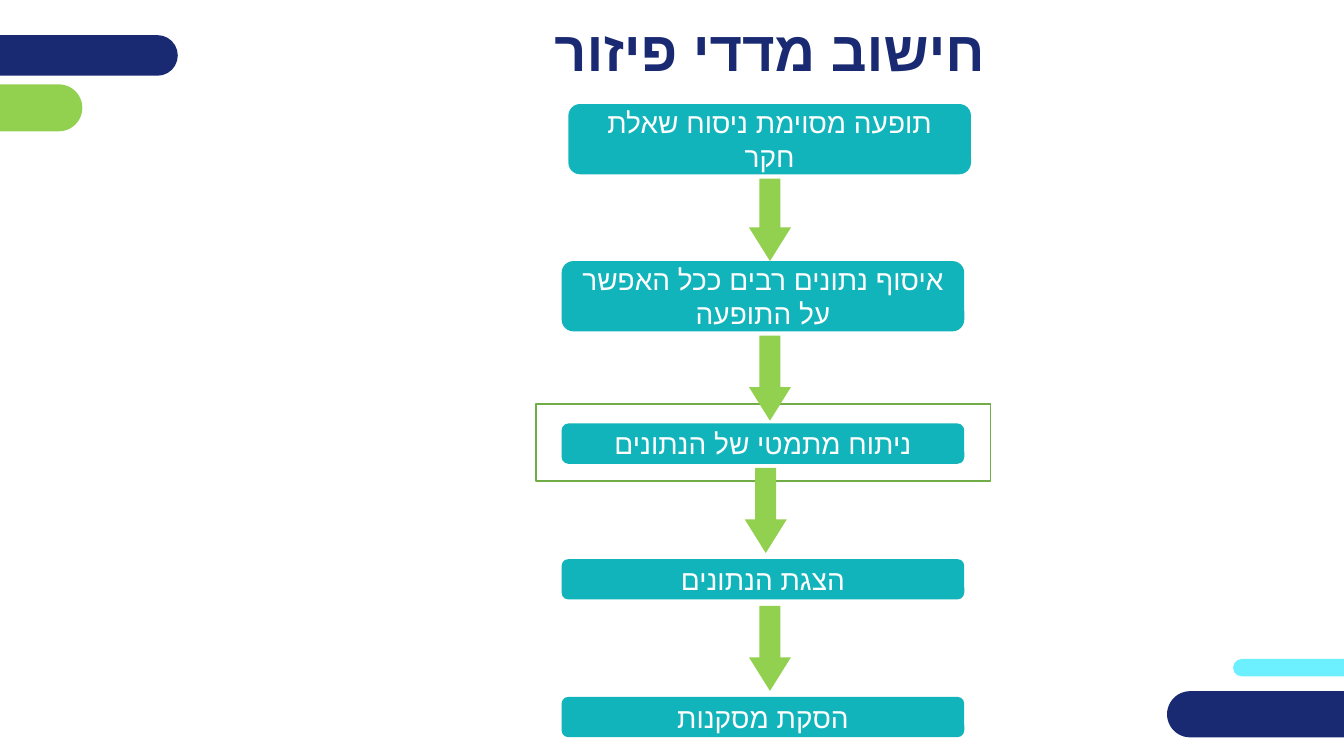
from lxml.etree import SubElement
from pptx import Presentation
from pptx.dml.color import RGBColor
from pptx.enum.shapes import MSO_SHAPE
from pptx.enum.text import MSO_ANCHOR, PP_ALIGN
from pptx.oxml.ns import qn
from pptx.util import Pt

# Content
FONT = "Arial"
NAVY, GREEN, CYAN, TEAL, WHITE = "192A72", "92D050", "6CF0FF", "12B4BC", "FFFFFF"
FRAME_GREEN = "70AD47"

TITLE = "חישוב מדדי פיזור"
TITLE_AREA = (146.2, 13, 807, 50.4)

# Text, left, top, height of each step
STEPS = [
    ("תופעה מסוימת ניסוח שאלת חקר", 406, 74.3, 50.2),
    ("איסוף נתונים רבים ככל האפשר על התופעה", 401.2, 186.5, 50.2),
    ("ניתוח מתמטי של הנתונים", 401.2, 302.5, 28.8),
    ("הצגת הנתונים", 401.2, 399.4, 28.8),
    ("הסקת מסקנות", 401.2, 497.8, 28.8),
]
STEP_WIDTH = 287.6

# Left, top, height of the arrow below each step but the last
ARROWS = [
    (535, 127.5, 59),
    (535, 239.7, 60.8),
    (532, 334.2, 60.8),
    (535, 432.7, 60.8),
]
ARROW_WIDTH = 30

FRAME = (383, 288.5, 324.4, 55)

# Rounded bars at the slide edges: colour and area
BARS = [
    (CYAN, (880.8, 470.7, 125, 12.4)),
    (GREEN, (-32.4, 60.3, 91.2, 33.5)),
    (NAVY, (-38, 25.1, 165, 29)),
    (NAVY, (833.6, 493.7, 173, 33)),
]


def color(hex_text):
    return RGBColor.from_string(hex_text)


def add_box(page, kind, area, fill, line=None):
    box = page.shapes.add_shape(kind, *[Pt(value) for value in area])
    box.shadow.inherit = False
    box.fill.solid()
    box.fill.fore_color.rgb = color(fill)
    if line:
        box.line.color.rgb = color(line)
        box.line.width = Pt(1)
    else:
        box.line.fill.background()
    return box


def write(box, text, size, text_color, bold=False):
    frame = box.text_frame
    frame.word_wrap = True
    frame.vertical_anchor = MSO_ANCHOR.MIDDLE
    frame.text = text
    para = frame.paragraphs[0]
    para.alignment = PP_ALIGN.CENTER
    para._p.get_or_add_pPr().set("rtl", "1")
    span = para.runs[0]
    span.font.name = FONT
    span.font.size = Pt(size)
    span.font.bold = bold
    span.font.color.rgb = color(text_color)
    # Hebrew takes the complex script font
    properties = span._r.get_or_add_rPr()
    properties.set("lang", "he-IL")
    SubElement(properties, qn("a:cs")).set("typeface", FONT)
    return para


deck = Presentation()
deck.slide_width, deck.slide_height = Pt(960), Pt(540)
page = deck.slides.add_slide(deck.slide_layouts[6])

# Edge bars
for fill, area in BARS:
    bar = add_box(page, MSO_SHAPE.ROUNDED_RECTANGLE, area, fill)
    bar.adjustments[0] = 0.5

# Title
title = page.shapes.add_textbox(*[Pt(value) for value in TITLE_AREA])
write(title, TITLE, 40, NAVY, bold=True).line_spacing = 0.9

# Frame around the third step
add_box(page, MSO_SHAPE.RECTANGLE, FRAME, WHITE, FRAME_GREEN)

# Steps and the arrows between them
for text, left, top, height in STEPS:
    step = add_box(page, MSO_SHAPE.FLOWCHART_ALTERNATE_PROCESS,
                   (left, top, STEP_WIDTH, height), TEAL)
    write(step, text, 20, WHITE)

for left, top, height in ARROWS:
    arrow = add_box(page, MSO_SHAPE.DOWN_ARROW, (left, top, ARROW_WIDTH, height), GREEN)
    arrow.adjustments[0] = 0.5
    arrow.adjustments[1] = 0.8

deck.save("out.pptx")
